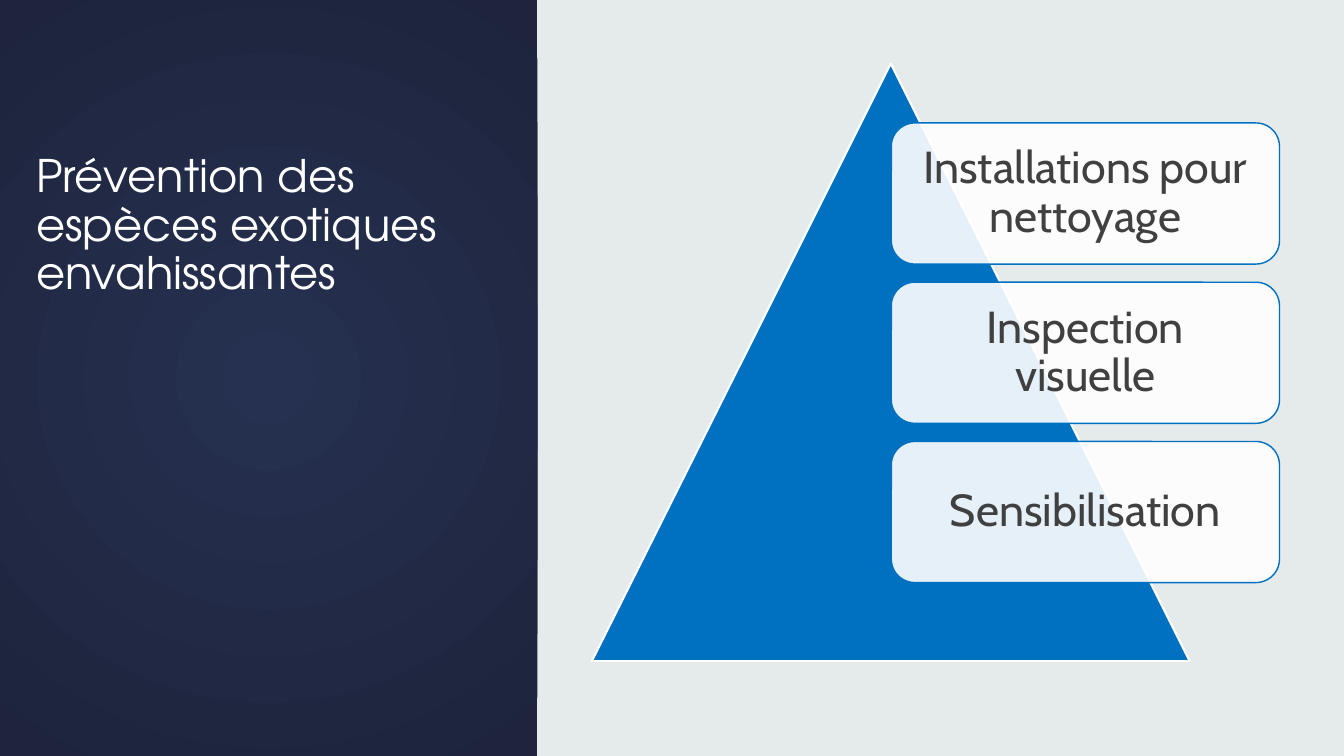
from lxml import etree
from pptx import Presentation
from pptx.dml.color import RGBColor
from pptx.enum import shapes, text
from pptx.oxml import ns
from pptx.util import Inches, Pt

NIGHT = RGBColor(0x26, 0x30, 0x50)
DARK = RGBColor(0x1D, 0x24, 0x3C)
PALE = RGBColor(0xE5, 0xEA, 0xEA)
BLUE = RGBColor(0x00, 0x70, 0xC0)
GREY = RGBColor(0x40, 0x40, 0x40)
WHITE = RGBColor(0xFF, 0xFF, 0xFF)


def draw(kind, left, top, width, height, fill=None, line=None, weight=1):
    shape = slide.shapes.add_shape(
        kind, Inches(left), Inches(top), Inches(width), Inches(height))
    shape.shadow.inherit = False
    if fill is not None:
        shape.fill.solid()
        shape.fill.fore_color.rgb = fill
    if line is None:
        shape.line.fill.background()
    else:
        shape.line.color.rgb = line
        shape.line.width = Pt(weight)
    return shape


def write(frame, words, font, color, align, anchor):
    frame.word_wrap = True
    frame.vertical_anchor = anchor
    para = frame.paragraphs[0]
    para.alignment = align
    para.line_spacing = 0.9
    run = para.add_run()
    run.text = words
    run.font.name = font
    run.font.size = Pt(32)
    run.font.color.rgb = color


deck = Presentation()
deck.slide_width = Inches(13.33)
deck.slide_height = Inches(7.5)
slide = deck.slides.add_slide(deck.slide_layouts[6])
slide.background.fill.solid()
slide.background.fill.fore_color.rgb = PALE

panel = draw(shapes.MSO_SHAPE.RECTANGLE, 0, 0, 5.33, 7.5)
panel.fill.gradient()
for stop, color, place in zip(panel.fill.gradient_stops, (NIGHT, DARK), (0, 1)):
    stop.color.rgb = color
    stop.position = place
grad = panel.element.spPr.find(ns.qn("a:gradFill"))
grad.remove(grad.find(ns.qn("a:lin")))
round_ = etree.SubElement(grad, ns.qn("a:path"), {"path": "circle"})
etree.SubElement(round_, ns.qn("a:fillToRect"), dict.fromkeys("ltrb", "50000"))

title = slide.shapes.add_textbox(Inches(0.26), Inches(0.89), Inches(5), Inches(2.13))
write(title.text_frame, "Prévention des espèces exotiques envahissantes",
      "TeX Gyre Adventor", WHITE, text.PP_ALIGN.LEFT, text.MSO_ANCHOR.BOTTOM)

draw(shapes.MSO_SHAPE.ISOSCELES_TRIANGLE, 5.87, 0.63, 5.93, 5.93, BLUE, WHITE, 1.5)

steps = ["Installations pour nettoyage", "Inspection visuelle", "Sensibilisation"]
for i, step in enumerate(steps):
    card = draw(shapes.MSO_SHAPE.ROUNDED_RECTANGLE,
                8.84, 1.22 + 1.58 * i, 3.85, 1.4, WHITE, BLUE)
    tint = card.element.spPr.find(ns.qn("a:solidFill"))[0]
    etree.SubElement(tint, ns.qn("a:alpha"), {"val": "90000"})
    frame = card.text_frame
    frame.margin_left = frame.margin_right = Inches(0.14)
    frame.margin_top = frame.margin_bottom = Inches(0.13)
    write(frame, step, "Cabin", GREY, text.PP_ALIGN.CENTER, text.MSO_ANCHOR.MIDDLE)

deck.save("out.pptx")
